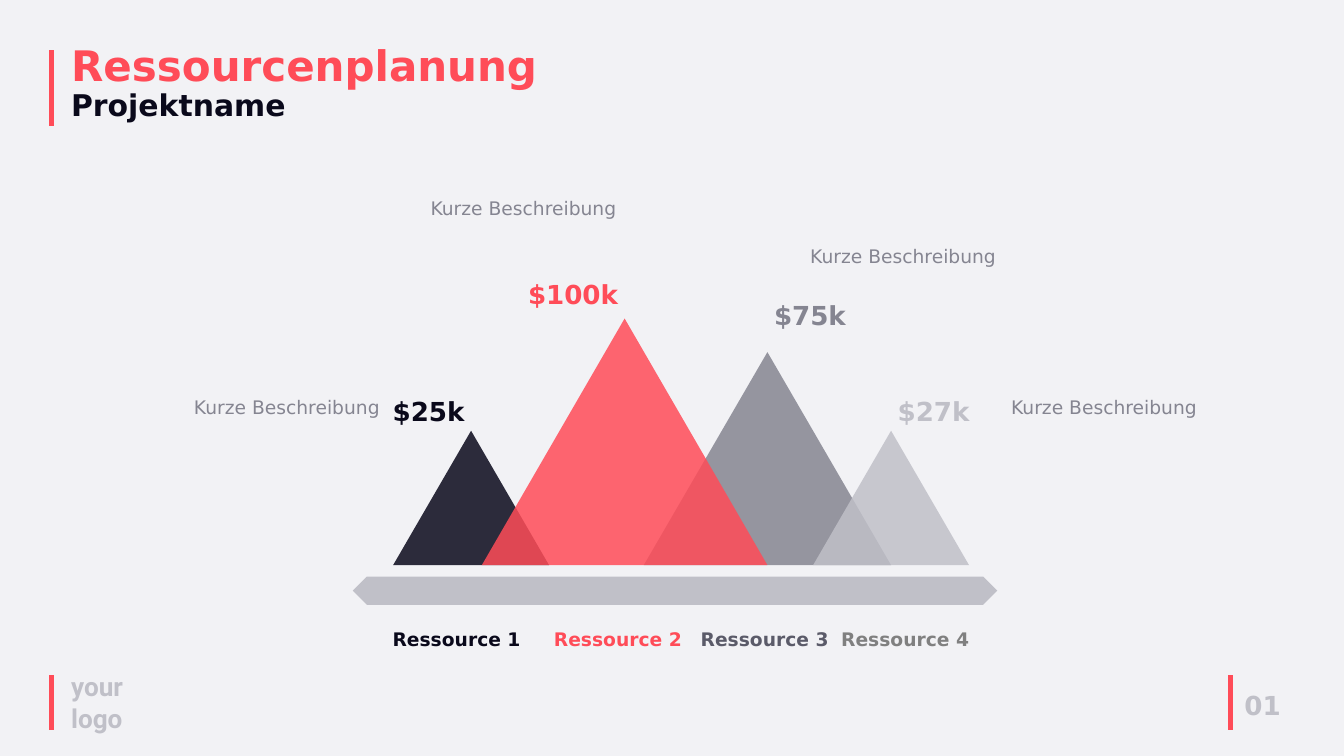
from lxml import etree
from pptx import Presentation
from pptx.dml.color import RGBColor
from pptx.enum.shapes import MSO_CONNECTOR, MSO_SHAPE
from pptx.enum.text import MSO_AUTO_SIZE, PP_ALIGN
from pptx.oxml.ns import qn
from pptx.util import Inches, Pt

LINE = MSO_CONNECTOR.STRAIGHT
PEAK, BAR = MSO_SHAPE.ISOSCELES_TRIANGLE, MSO_SHAPE.SNIP_2_SAME_RECTANGLE
LEFT, MID, RIGHT = PP_ALIGN.LEFT, PP_ALIGN.CENTER, PP_ALIGN.RIGHT
FIT = MSO_AUTO_SIZE.SHAPE_TO_FIT_TEXT
FONT = "DejaVu Sans"

COLORS = {
    "back": "F2F2F5", "red": "FF4C58", "navy": "0A091B", "gray": "858591",
    "pale": "C0C0C8", "slate": "5B5B69", "mid": "808080",
}

# Content: peaks from back to front
NOTE = "Kurze Beschreibung"
PEAKS = [  # value, color, left, width, height, value side, value top, note left, note top
    ("$75k", "gray", 9.58, 3.68, 3.17, LEFT, 4.4, 11.42, 3.59),
    ("$27k", "pale", 12.1, 2.32, 2, LEFT, 5.84, 14.41, 5.84),
    ("$25k", "navy", 5.85, 2.32, 2, RIGHT, 5.84, 2.25, 5.84),
    ("$100k", "red", 7.17, 4.25, 3.67, RIGHT, 4.09, 5.77, 2.88),
]
NAMES = [  # text, color, left, width
    ("Ressource 1", "navy", 5.63, 2.33),
    ("Ressource 2", "red", 8.14, 2.11),
    ("Ressource 3", "slate", 10.26, 2.24),
    ("Ressource 4", "mid", 12.33, 2.28),
]
TITLE = [("Ressourcenplanung", 45, "red"), ("Projektname", 32, "navy")]
RULES = [(0.77, 0.75, 1.88), (0.77, 10.05, 10.86), (18.31, 10.05, 10.86)]
BASE, WIDE = 8.41, 1.75  # foot of the peaks, width of a value box

deck = Presentation()
deck.slide_width, deck.slide_height = Inches(20), Inches(11.25)
slide = deck.slides.add_slide(deck.slide_layouts[6])
shapes = slide.shapes


def rgb(name):
    return RGBColor.from_string(COLORS[name])


def box(x, y, w, h):
    return [Inches(v) for v in (x, y, w, h)]


def add_run(para, text, size, color, bold=True, font=FONT):
    run = para.add_run()
    run.text = text
    run.font.name, run.font.size, run.font.bold = font, Pt(size), bold
    run.font.color.rgb = rgb(color)


def add_box(x, y, w, h, align=LEFT):
    frame = shapes.add_textbox(*box(x, y, w, h)).text_frame
    frame.word_wrap = True
    frame.auto_size = FIT
    para = frame.paragraphs[0]
    para.alignment = align
    return para


def add_form(kind, x, y, w, h, color, alpha=None):
    form = shapes.add_shape(kind, *box(x, y, w, h))
    form.shadow.inherit = False
    form.fill.solid()
    form.fill.fore_color.rgb = rgb(color)
    form.line.fill.background()
    if alpha:
        tone = form.fill._xPr.find(".//" + qn("a:srgbClr"))
        etree.SubElement(tone, qn("a:alpha")).set("val", str(alpha * 1000))
    return form


# Background and accent rules
slide.background.fill.solid()
slide.background.fill.fore_color.rgb = rgb("back")
for x, top, end in RULES:
    rule = shapes.add_connector(LINE, Inches(x), Inches(top), Inches(x), Inches(end))
    rule.line.color.rgb = rgb("red")
    rule.line.width = Pt(5)
    etree.SubElement(rule._element.spPr, qn("a:effectLst"))

# Title and footer
head = add_box(0.96, 0.62, 7.38, 1.27)
head.line_spacing = 0.9
for i, (text, size, color) in enumerate(TITLE):
    if i:
        head.add_line_break()
    add_run(head, text, size, color)
add_run(add_box(0.96, 9.93, 1.19, 1.04), "your logo", 28, "pale", font="Roboto")
add_run(add_box(18.42, 10.21, 1.5, 0.57), "01", 28, "pale")

# Base bar, snipped to a point at both ends
bar = add_form(BAR, 5.25, 8.58, 9.59, 0.42, "pale")
bar.adjustments[0] = bar.adjustments[1] = 0.5

# Peaks: each value starts or ends at the tip
for text, color, x, w, h, side, top, left, high in PEAKS:
    add_form(PEAK, x, BASE - h, w, h, color, 85)
    tip = x + w / 2
    start = tip if side == LEFT else tip - WIDE
    add_run(add_box(start, top, WIDE, 0.57, side), text, 28, color)
    add_run(add_box(left, high, 3.5, 0.44, RIGHT), NOTE, 20, "gray", False)

# Resource names
for text, color, x, w in NAMES:
    add_run(add_box(x, 9.3, w, 0.44, MID), text, 20, color)

deck.save("out.pptx")
